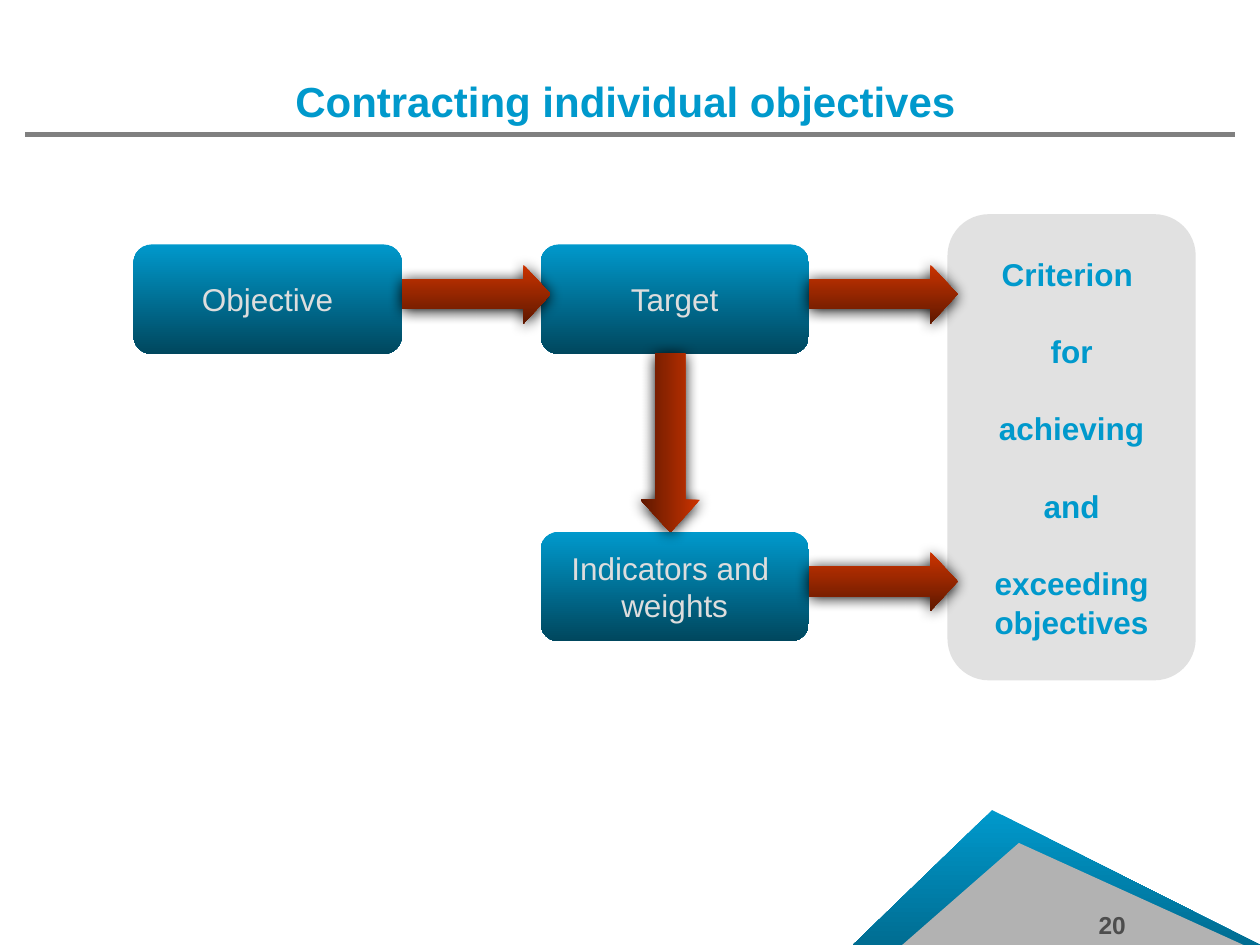
from lxml import etree
from pptx import Presentation
from pptx import util as u
from pptx.dml.color import RGBColor
from pptx.enum import shapes, text
from pptx.oxml import ns

BLUE = RGBColor(0x00, 0x99, 0xCC)
MID_BLUE = RGBColor(0x00, 0x6D, 0x92)
DARK_BLUE = RGBColor(0x00, 0x47, 0x5E)
RED = RGBColor(0xCC, 0x33, 0x00)
DARK_RED = RGBColor(0x5E, 0x18, 0x00)
SILVER = RGBColor(0xB2, 0xB2, 0xB2)
RULE_GRAY = RGBColor(0x80, 0x80, 0x80)
NUMBER_GRAY = RGBColor(0x4D, 0x4D, 0x4D)
PALE_GRAY = RGBColor(0xDD, 0xDD, 0xDD)

SHAPE = shapes.MSO_SHAPE
BOX_WIDTH, BOX_HEIGHT = 2.13, 0.87
LEFT_COLUMN, MIDDLE_COLUMN = 1.06, 4.29
TOP_ROW, BOTTOM_ROW = 1.94, 4.22
ARROW_LENGTH, ARROW_HEIGHT = 1.18, 0.47


def inches(*lengths):
    return [u.Inches(length) for length in lengths]


def add_plain_shape(slide, kind, *bounds):
    shape = slide.shapes.add_shape(kind, *inches(*bounds))
    shape.shadow.inherit = False
    shape.line.fill.background()
    return shape


def fill_solid(shape, color, opacity=100):
    shape.fill.solid()
    shape.fill.fore_color.rgb = color
    if opacity < 100:
        color_element = shape._element.spPr.find(".//" + ns.qn("a:srgbClr"))
        etree.SubElement(color_element, ns.qn("a:alpha"), val=str(opacity * 1000))


def fill_downward(shape, top_color, bottom_color):
    shape.fill.gradient()
    shape.fill.gradient_angle = 270
    for stop, color, position in zip(shape.fill.gradient_stops,
                                     (top_color, bottom_color), (0, 1)):
        stop.color.rgb = color
        stop.position = position


def write_lines(shape, lines, size, color, bold=False, align=text.PP_ALIGN.CENTER):
    frame = shape.text_frame
    frame.text = "\n".join(lines)
    for paragraph in frame.paragraphs:
        paragraph.alignment = align
        paragraph.font.name = "Arial"
        paragraph.font.size = u.Pt(size)
        paragraph.font.bold = bold
        paragraph.font.color.rgb = color
    return frame


def add_peak(slide, *bounds):
    peak = add_plain_shape(slide, SHAPE.ISOSCELES_TRIANGLE, *bounds)
    peak.adjustments[0] = 0.342
    return peak


def add_box(slide, left, top, *lines):
    box = add_plain_shape(slide, SHAPE.FLOWCHART_ALTERNATE_PROCESS,
                          left, top, BOX_WIDTH, BOX_HEIGHT)
    fill_downward(box, BLUE, DARK_BLUE)
    frame = write_lines(box, lines, 18, PALE_GRAY)
    frame.word_wrap = False
    frame.vertical_anchor = text.MSO_ANCHOR.MIDDLE


def add_arrow(slide, left, top, length=ARROW_LENGTH, head=0.46, rotation=0):
    arrow = add_plain_shape(slide, SHAPE.RIGHT_ARROW, left, top, length, ARROW_HEIGHT)
    arrow.adjustments[0] = 0.5
    arrow.adjustments[1] = head
    arrow.rotation = rotation
    fill_downward(arrow, RED, DARK_RED)
    # Soft black shadow just below the arrow
    effects = arrow._element.spPr.find(ns.qn("a:effectLst"))
    shadow = etree.SubElement(effects, ns.qn("a:outerShdw"),
                              blurRad=str(u.Pt(8.5)), dist=str(u.Pt(1)),
                              dir="5400000", rotWithShape="0")
    etree.SubElement(shadow, ns.qn("a:srgbClr"), val="000000")


def add_criterion_panel(slide):
    panel = add_plain_shape(slide, SHAPE.FLOWCHART_ALTERNATE_PROCESS, 7.52, 1.7, 1.97, 3.7)
    fill_solid(panel, SILVER, opacity=38)
    lines = ["Criterion ", "for", "achieving", "and", "exceeding", "objectives"]
    frame = write_lines(panel, lines, 18, BLUE, bold=True)
    frame.word_wrap = True
    frame.vertical_anchor = text.MSO_ANCHOR.MIDDLE
    for paragraph in frame.paragraphs:
        paragraph.line_spacing = 1.04
    for paragraph in frame.paragraphs[1:-1]:
        paragraph.space_before = u.Pt(21.6)


def add_rule(slide):
    rule = slide.shapes.add_connector(shapes.MSO_CONNECTOR.STRAIGHT,
                                      *inches(0.2, 1.07, 9.8, 1.07))
    rule.line.color.rgb = RULE_GRAY
    rule.line.width = u.Pt(3)
    etree.SubElement(rule._element.spPr, ns.qn("a:effectLst"))


def set_title(slide, title_text):
    title = slide.shapes.title
    title.left, title.top, title.width, title.height = inches(0.16, 0.55, 9.61, 0.5)
    frame = write_lines(title, [title_text], 24, BLUE, bold=True)
    frame.vertical_anchor = text.MSO_ANCHOR.MIDDLE


def add_page_number(slide, number):
    box = slide.shapes.add_textbox(*inches(8.62, 7.17, 0.55, 0.33))
    frame = write_lines(box, [number], 14, NUMBER_GRAY, bold=True,
                        align=text.PP_ALIGN.LEFT)
    frame.word_wrap = True


def main():
    presentation = Presentation()
    presentation.slide_width, presentation.slide_height = inches(10, 7.5)
    slide = presentation.slides.add_slide(presentation.slide_layouts[5])

    # Corner decoration, title and page number
    fill_downward(add_peak(slide, 6.77, 6.43, 3.23, 1.07), BLUE, MID_BLUE)
    fill_solid(add_peak(slide, 7.16, 6.69, 2.71, 0.81), SILVER)
    add_rule(slide)
    add_page_number(slide, "20")
    set_title(slide, "Contracting individual objectives")

    # Steps and the criterion they lead to
    add_box(slide, LEFT_COLUMN, TOP_ROW, "Objective")
    add_criterion_panel(slide)
    add_box(slide, MIDDLE_COLUMN, TOP_ROW, "Target")
    add_box(slide, MIDDLE_COLUMN, BOTTOM_ROW, "Indicators and ", "weights")

    # Arrows start at the right edge of each box
    for column, row in ((MIDDLE_COLUMN, BOTTOM_ROW), (LEFT_COLUMN, TOP_ROW),
                        (MIDDLE_COLUMN, TOP_ROW)):
        add_arrow(slide, column + BOX_WIDTH, row + 0.16)
    add_arrow(slide, 4.61, 3.28, length=1.42, head=0.55, rotation=90)

    presentation.save("out.pptx")


if __name__ == "__main__":
    main()
